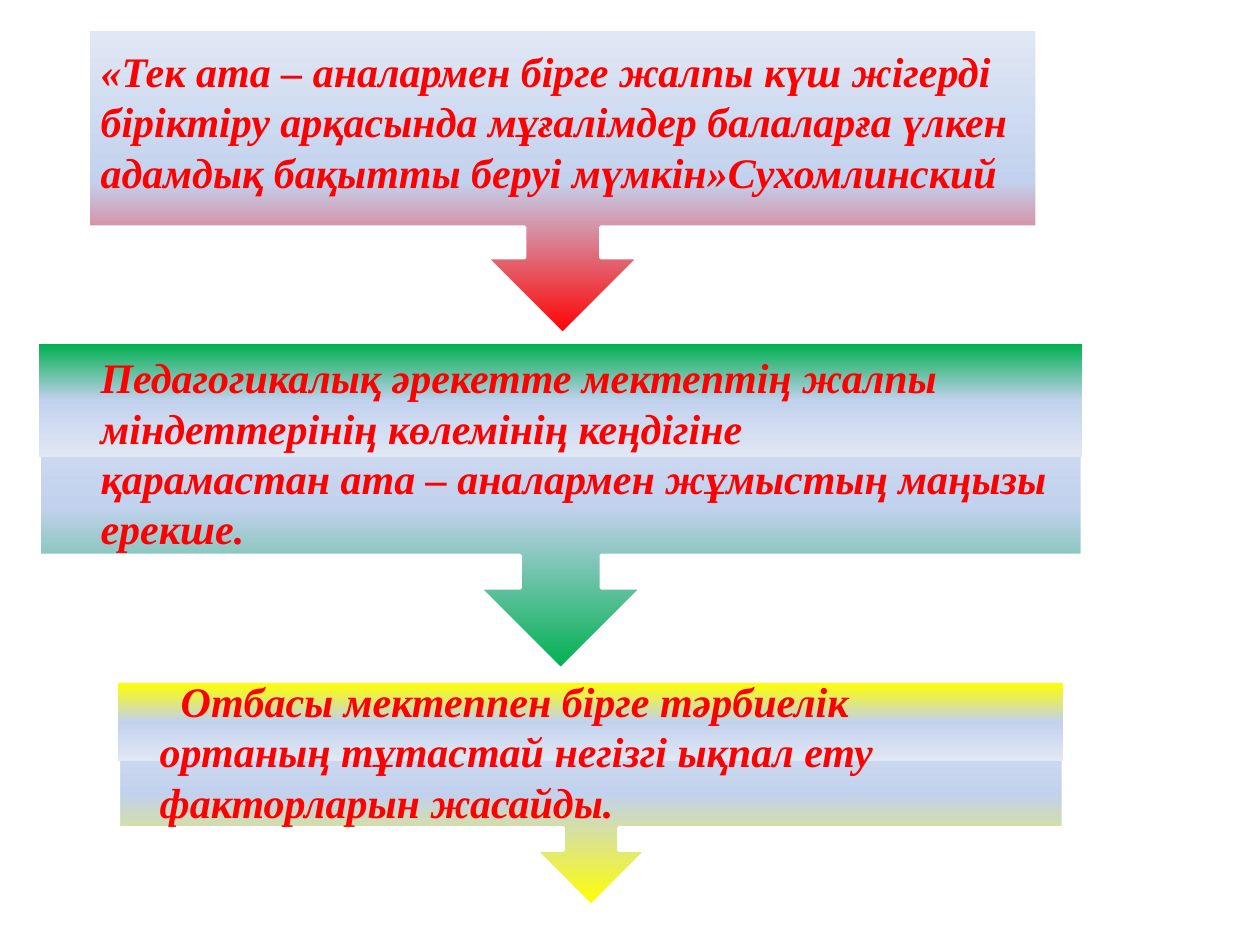
from copy import deepcopy
from pptx import Presentation
from pptx.dml.color import RGBColor
from pptx.enum.shapes import MSO_SHAPE
from pptx.enum.text import MSO_ANCHOR
from pptx.util import Pt

COLORS = {
    "red": "FF0000",
    "green": "00B050",
    "yellow": "FFFF00",
    "blue": "C2D1ED",
    "pale": "E1E8F5",
    "white": "FFFFFF",
}


def rgb(name):
    return RGBColor.from_string(COLORS[name])


def add_block(kind, x, y, w, h, color):
    sp = s.shapes.add_shape(kind, Pt(x), Pt(y), Pt(w), Pt(h))
    sp.shadow.inherit = False
    sp.fill.gradient()
    sp.fill.gradient_angle = 270
    gs_list = sp.fill._fill._gradFill.gsLst
    gs_list.append(deepcopy(gs_list[-1]))
    stops = zip(sp.fill.gradient_stops, (0, 0.5, 1), (color, "blue", "pale"))
    for stop, position, name in stops:
        stop.position = position
        stop.color.rgb = rgb(name)
    sp.line.fill.background()
    return sp


prs = Presentation()
prs.slide_width, prs.slide_height = Pt(720), Pt(540)
s = prs.slides.add_slide(prs.slide_layouts[6])

callouts = [
    (50.4, 16.6, 542.2, 174.2, 0, "red"),
    (67.7, 390.2, 540, 127.4, 44.6, "yellow"),
    (22.3, 196.6, 596.2, 185.8, 64.8, "green"),
]
for x, y, w, h, band, color in callouts:
    sp = add_block(MSO_SHAPE.UP_ARROW_CALLOUT, x, y, w, h, color)
    sp.rotation = 180
    sp.line.color.rgb = rgb("white")
    sp.line.width = Pt(2)
    if band:
        add_block(MSO_SHAPE.RECTANGLE, x, y, w, band, color)

texts = [
    (50.4, 22.3, 562.3, 94.3, 0, MSO_ANCHOR.TOP,
     ["«Тек ата – аналармен бірге жалпы күш жігерді біріктіру арқасында "
      "мұғалімдер балаларға үлкен адамдық бақытты беруі мүмкін»Сухомлинский"]),
    (84.2, 382.3, 495.4, 94.3, 12, MSO_ANCHOR.TOP,
     ["Отбасы мектеппен бірге тәрбиелік ортаның тұтастай негізгі ықпал ету "
      "факторларын жасайды."]),
    (50.4, 196.6, 568.1, 123.8, 0, MSO_ANCHOR.MIDDLE,
     ["Педагогикалық әрекетте мектептің жалпы міндеттерінің көлемінің кеңдігіне",
      "қарамастан ата – аналармен жұмыстың маңызы ерекше."]),
]
for x, y, w, h, indent, anchor, lines in texts:
    tf = s.shapes.add_textbox(Pt(x), Pt(y), Pt(w), Pt(h)).text_frame
    tf.word_wrap = True
    tf.vertical_anchor = anchor
    tf.text = "\n".join(lines)
    for p in tf.paragraphs:
        p._p.get_or_add_pPr().set("indent", str(Pt(indent)))
        font = p.runs[0].font
        font.name = "Times New Roman"
        font.size = Pt(24)
        font.bold = font.italic = True
        font.color.rgb = rgb("red")

prs.save("out.pptx")
